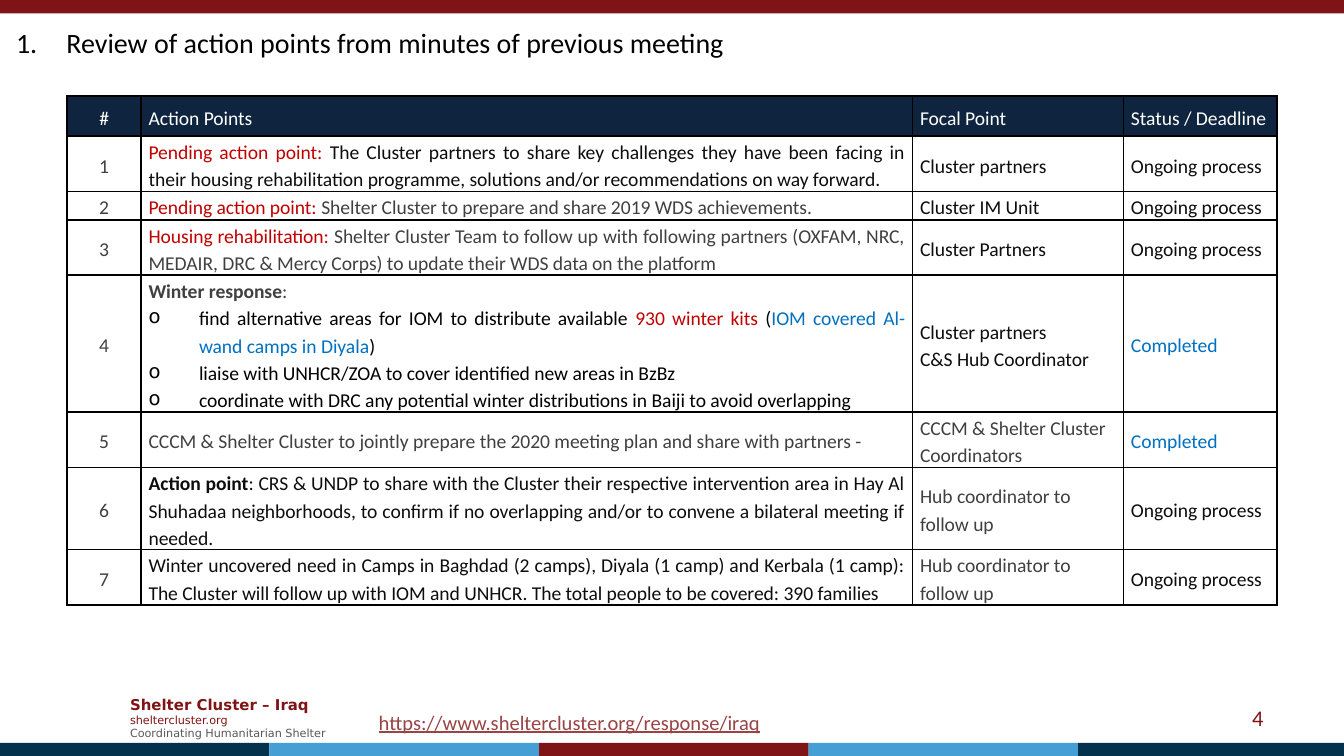
from pptx import Presentation
from pptx.dml.color import RGBColor
from pptx.enum.shapes import MSO_SHAPE as Shape
from pptx.enum.text import MSO_ANCHOR as Anchor, PP_ALIGN as Align
from pptx.oxml.ns import qn
from pptx.util import Pt
from lxml.etree import SubElement as Sub

RED, NAVY, BLUE = "7F1416", "04314C", "459FD5"
MARK, SKY, GREY, DARK, BLACK = "C00000", "0070C0", "404040", "0D0D0D", "000000"

TITLE = "Review of action points from minutes of previous meeting"
LINK = "https://www.sheltercluster.org/response/iraq"
BANDS = [NAVY, BLUE, RED, BLUE, NAVY]
BRAND = [
    ("Shelter Cluster – Iraq", 8, RED, True),
    ("sheltercluster.org", 6, RED, False),
    ("Coordinating Humanitarian Shelter", 6, "595959", False),
]
HEAD = ["#", "Action Points", "Focal Point", "Status / Deadline"]
ONGOING, DONE = ("Ongoing process", DARK), ("Completed", SKY)
HUB = [("Hub coordinator to follow up", GREY)]

# action paragraphs, focal points, status, text lines
ROWS = [
    ([[("Pending action point: ", MARK),
       ("The Cluster partners to share key challenges they have been facing in their housing "
        "rehabilitation programme, solutions and/or recommendations on way forward.", DARK)]],
     [("Cluster partners", DARK)], ONGOING, 2),
    ([[("Pending action point: ", MARK),
       ("Shelter Cluster to prepare and share 2019 WDS achievements.", GREY)]],
     [("Cluster IM Unit", DARK)], ONGOING, 1),
    ([[("Housing rehabilitation: ", MARK),
       ("Shelter Cluster Team to follow up with following partners (OXFAM, NRC, MEDAIR, DRC & "
        "Mercy Corps) to update their WDS data on the platform", GREY)]],
     [("Cluster Partners", DARK)], ONGOING, 2),
    ([[("Winter response", GREY, True), (": ", GREY)],
      [("find alternative areas for IOM to distribute available ", BLACK),
       ("930 winter kits ", MARK), ("(", BLACK),
       ("IOM covered Al-wand camps in Diyala", SKY), (")", BLACK)],
      [("liaise with UNHCR/ZOA to cover identified new areas in BzBz", BLACK)],
      [("coordinate with DRC any potential winter distributions in Baiji to avoid overlapping",
        BLACK)]],
     [("Cluster partners", DARK), ("C&S Hub Coordinator", DARK)], DONE, 5),
    ([[("CCCM & Shelter Cluster to jointly prepare the 2020 meeting plan and share with "
        "partners - ", GREY)]],
     [("CCCM & Shelter Cluster Coordinators", GREY)], DONE, 2),
    ([[("Action point", DARK, True),
       (": CRS & UNDP to share with the Cluster their respective intervention area in Hay Al "
        "Shuhadaa neighborhoods, to confirm if no overlapping and/or to convene a bilateral "
        "meeting if needed.", DARK)]],
     HUB, ONGOING, 3),
    ([[("Winter uncovered need in Camps in Baghdad (2 camps), Diyala (1 camp) and Kerbala "
        "(1 camp): The Cluster will follow up with IOM and UNHCR. The total people to be "
        "covered: 390 families", DARK)]],
     HUB, ONGOING, 2),
]
COLS = [39.6, 413.3, 113, 82.1]
HEAD_H, LINE_H = 21.6, 14.67


def color(code):
    return RGBColor.from_string(code)


def add_run(par, text, size, code, bold=False, face="Calibri"):
    run = par.add_run()
    run.text = text
    font = run.font
    font.name, font.size, font.bold = face, Pt(size), bold
    font.color.rgb = color(code)
    return run


def add_bullet(par, tag, **attrs):
    props = par._p.get_or_add_pPr()
    props.set("marL", str(Pt(27)))
    props.set("indent", str(-Pt(27)))
    Sub(props, qn(tag), attrs)


def add_bar(left, top, width, code):
    bar = slide.shapes.add_shape(Shape.RECTANGLE, Pt(left), Pt(top), Pt(width), Pt(7.2))
    bar.shadow.inherit = False
    bar.fill.solid()
    bar.fill.fore_color.rgb = color(code)
    bar.line.fill.background()


def add_box(left, top, width, height, anchor=Anchor.TOP, wrap=True):
    box = slide.shapes.add_textbox(Pt(left), Pt(top), Pt(width), Pt(height))
    frame = box.text_frame
    frame.word_wrap, frame.vertical_anchor = wrap, anchor
    return frame


def next_par(frame, num):
    return frame.add_paragraph() if num else frame.paragraphs[0]


def fill_cell(cell, pars, align, back=None):
    cell.margin_left = cell.margin_right = Pt(4)
    cell.margin_top, cell.margin_bottom = Pt(0.7), Pt(0)
    cell.vertical_anchor = Anchor.MIDDLE
    props = cell._tc.get_or_add_tcPr()
    for side in ("a:lnL", "a:lnR", "a:lnT", "a:lnB"):
        edge = Sub(props, qn(side), w=str(Pt(1)))
        Sub(Sub(edge, qn("a:solidFill")), qn("a:srgbClr"), val=BLACK)
    if back:
        cell.fill.solid()
        cell.fill.fore_color.rgb = color(back)
    else:
        cell.fill.background()
    for num, runs in enumerate(pars):
        par = next_par(cell.text_frame, num)
        if num and align[1]:
            add_bullet(par, "a:buChar", char="o")
        par.alignment, par.line_spacing = align[0], 1.15
        for text, code, *bold in runs:
            add_run(par, text, 10.5, code, bool(bold))


deck = Presentation()
deck.slide_width, deck.slide_height = Pt(720), Pt(405)
slide = deck.slides.add_slide(deck.slide_layouts[5])

add_bar(0, 0, 720, RED)
step = 144.4
for num, code in enumerate(BANDS):
    add_bar(num * step, 398, min(step, 720 - num * step), code)

frame = add_box(62.6, 368.6, 124.6, 31.7, Anchor.MIDDLE)
for num, (text, size, code, bold) in enumerate(BRAND):
    add_run(next_par(frame, num), text, size, code, bold, "DejaVu Sans")

frame = add_box(195.8, 376.6, 222.5, 20.9, wrap=False)
add_run(frame.paragraphs[0], LINK, 11, "994345").font.underline = True

frame = add_box(516.2, 373.7, 167.8, 21.6, Anchor.MIDDLE)
frame.paragraphs[0].alignment = Align.RIGHT
add_run(frame.paragraphs[0], "4", 12, RED)

title = slide.shapes.title
title.left, title.top, title.width, title.height = Pt(1.4), Pt(10.1), Pt(716.4), Pt(25.2)
title.text_frame.vertical_anchor = Anchor.TOP
par = title.text_frame.paragraphs[0]
add_bullet(par, "a:buAutoNum", type="arabicPeriod")
par.alignment = Align.LEFT
add_run(par, TITLE, 15, BLACK)

heights = [HEAD_H] + [row[-1] * LINE_H for row in ROWS]
table = slide.shapes.add_table(len(heights), len(COLS), Pt(36), Pt(51.4),
                               Pt(sum(COLS)), Pt(sum(heights))).table
table.first_row = table.horz_banding = False
for col, width in zip(table.columns, COLS):
    col.width = Pt(width)
for row, height in zip(table.rows, heights):
    row.height = Pt(height)

ALIGNS = [(Align.CENTER, False), (Align.JUSTIFY, True),
          (Align.LEFT, False), (Align.JUSTIFY, False)]
for num, text in enumerate(HEAD):
    align = ALIGNS[0] if num == 0 else ALIGNS[3]
    fill_cell(table.cell(0, num), [[(text, "FFFFFF")]], align, "0F243E")
for num, (action, focal, status, _) in enumerate(ROWS, 1):
    parts = [[[(str(num), GREY)]], action, [[name] for name in focal], [[status]]]
    for col, (pars, align) in enumerate(zip(parts, ALIGNS)):
        fill_cell(table.cell(num, col), pars, align)

deck.save("out.pptx")
